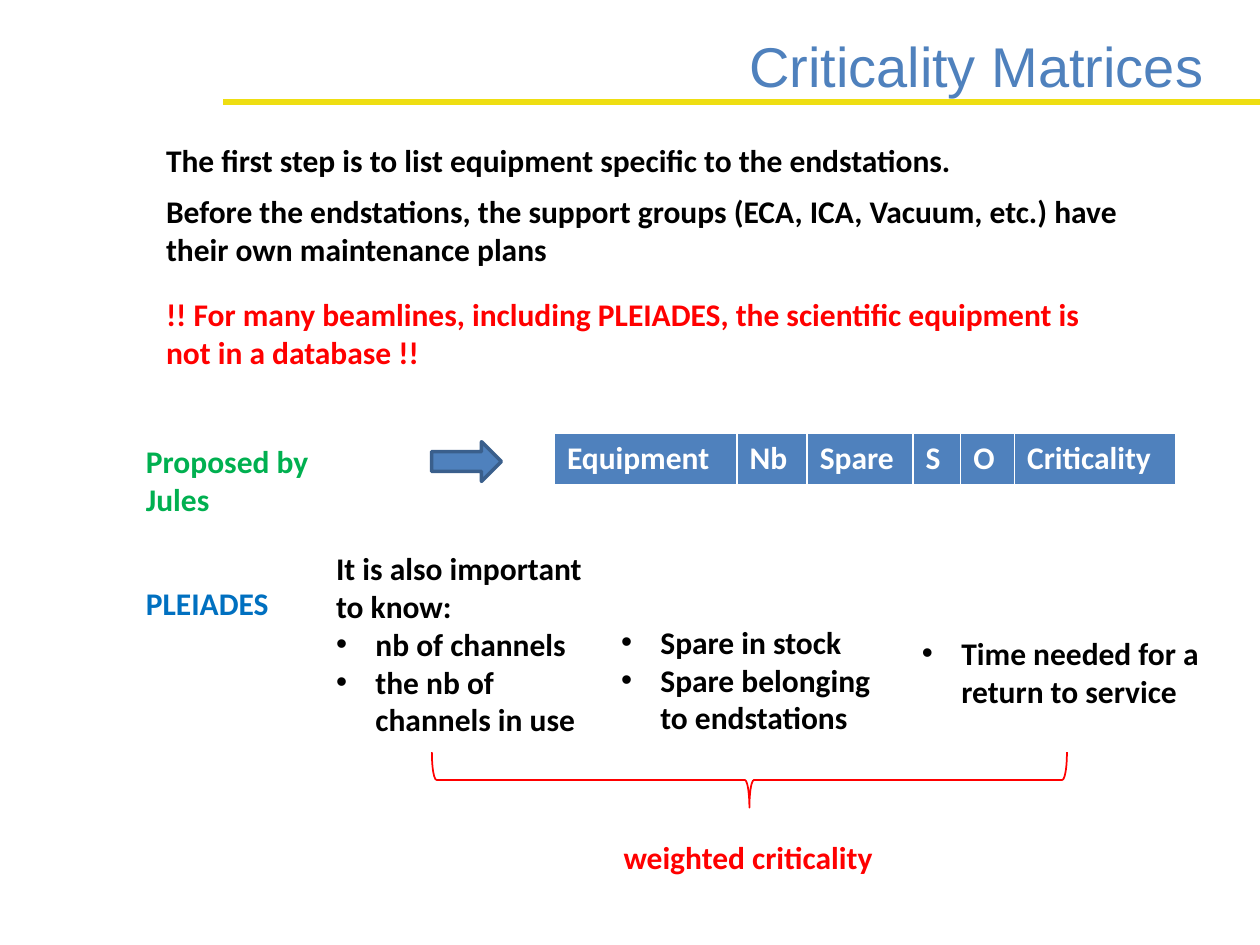
"""Build the Criticality Matrices slide."""
from lxml import etree
from pptx import Presentation
from pptx.dml.color import RGBColor
from pptx.enum.shapes import MSO_CONNECTOR, MSO_SHAPE
from pptx.enum.text import MSO_ANCHOR, PP_ALIGN
from pptx.oxml.ns import qn
from pptx.util import Pt

STRAIGHT = MSO_CONNECTOR.STRAIGHT
RIGHT_ARROW, LEFT_BRACE = MSO_SHAPE.RIGHT_ARROW, MSO_SHAPE.LEFT_BRACE
MIDDLE, RIGHT = MSO_ANCHOR.MIDDLE, PP_ALIGN.RIGHT

COLOURS = {
    "black": "000000", "white": "FFFFFF", "red": "FF0000", "green": "00B050",
    "azure": "0070C0", "blue": "4F81BD", "navy": "3A5F8C", "yellow": "EEDE12",
}
TITLE = "Criticality Matrices "
BULLET = "• "
BULLET_INDENT = 22.5

# left, top, width, height, wraps, colour, paragraphs
TEXTS = [
    (87.8, 77, 467.3, 29, False, "black",
     ["The first step is to list equipment specific to the endstations."]),
    (87.8, 106.4, 589.7, 51, True, "black",
     ["Before the endstations, the support groups (ECA, ICA, Vacuum, etc.) "
      "have their own maintenance plans"]),
    (87.8, 165, 550, 51, True, "red",
     ["!! For many beamlines, including PLEIADES, the scientific equipment "
      "is not in a database !!"]),
    (76.3, 249.3, 147.2, 29, False, "green", ["Proposed by Jules"]),
    (76.3, 330, 85, 29, False, "azure", ["PLEIADES"]),
    (185, 310.3, 162.7, 116.6, True, "black",
     ["It is also important to know:", "• nb of channels",
      "• the nb of channels in use"]),
    (347.8, 352.3, 172, 72.7, True, "black",
     ["• Spare in stock", "• Spare belonging to endstations"]),
    (519.8, 358.6, 182.9, 51, True, "black",
     ["• Time needed for a return to service"]),
    (349.2, 475.2, 157.7, 29, False, "red", ["weighted criticality"]),
]
COLUMNS = [("Equipment", 104.4), ("Nb", 40.1), ("Spare", 60.5),
           ("S", 27.2), ("O", 30.8), ("Criticality", 92.2)]
TABLE_LEFT, TABLE_TOP, TABLE_HEIGHT = 316.8, 247.8, 29.2


def colour(name):
    return RGBColor.from_string(COLOURS[name])


def style_font(font, colour_name, size=18, name="Calibri", bold=True):
    font.name, font.size, font.bold = name, Pt(size), bold
    font.color.rgb = colour(colour_name)


def add_bullet(para):
    properties = para._p.get_or_add_pPr()
    properties.set("marL", str(Pt(BULLET_INDENT)))
    properties.set("indent", str(-Pt(BULLET_INDENT)))
    etree.SubElement(properties, qn("a:buFont")).set("typeface", "Arial")
    etree.SubElement(properties, qn("a:buChar")).set("char", BULLET.strip())


def add_title(slide):
    title = slide.shapes.title
    title.left, title.top, title.width, title.height = map(Pt, (136, 15.1, 568, 44.6))
    title.text_frame.text = TITLE
    title.text_frame.vertical_anchor = MIDDLE
    para = title.text_frame.paragraphs[0]
    para.alignment = RIGHT
    style_font(para.font, "blue", 32, "Arial", False)


def add_text(slide, left, top, width, height, wraps, colour_name, lines):
    box = slide.shapes.add_textbox(Pt(left), Pt(top), Pt(width), Pt(height))
    frame = box.text_frame
    frame.word_wrap = wraps
    for index, line in enumerate(lines):
        para = frame.add_paragraph() if index else frame.paragraphs[0]
        para.text = line.removeprefix(BULLET)
        if line.startswith(BULLET):
            add_bullet(para)
        style_font(para.font, colour_name)


def add_table(slide):
    total = sum(width for _, width in COLUMNS)
    table = slide.shapes.add_table(
        1, len(COLUMNS), Pt(TABLE_LEFT), Pt(TABLE_TOP), Pt(total), Pt(TABLE_HEIGHT)).table
    for index, (heading, width) in enumerate(COLUMNS):
        table.columns[index].width = Pt(width)
        cell = table.cell(0, index)
        cell.text = heading
        cell.fill.solid()
        cell.fill.fore_color.rgb = colour("blue")
        style_font(cell.text_frame.paragraphs[0].font, "white")


def add_outlined(slide, preset, place, line_name, line_width):
    shape = slide.shapes.add_shape(preset, *map(Pt, place))
    shape.shadow.inherit = False
    shape.line.color.rgb = colour(line_name)
    shape.line.width = Pt(line_width)
    return shape


def main():
    deck = Presentation()
    deck.slide_width, deck.slide_height = Pt(720), Pt(540)
    slide = deck.slides.add_slide(deck.slide_layouts[5])

    rule = slide.shapes.add_connector(STRAIGHT, Pt(720), Pt(58.3), Pt(127.4), Pt(58.3))
    rule.line.color.rgb = colour("yellow")
    rule.line.width = Pt(3)
    etree.SubElement(rule._element.spPr, qn("a:effectLst"))

    add_title(slide)
    for text in TEXTS:
        add_text(slide, *text)
    add_table(slide)

    arrow = add_outlined(slide, RIGHT_ARROW, (246.6, 252.4, 39.9, 22.7), "navy", 2)
    arrow.fill.solid()
    arrow.fill.fore_color.rgb = colour("blue")

    brace = add_outlined(slide, LEFT_BRACE, (412.4, 264.2, 31.7, 362.9), "red", 1)
    brace.fill.background()
    brace.rotation = 270

    deck.save("out.pptx")


if __name__ == "__main__":
    main()
